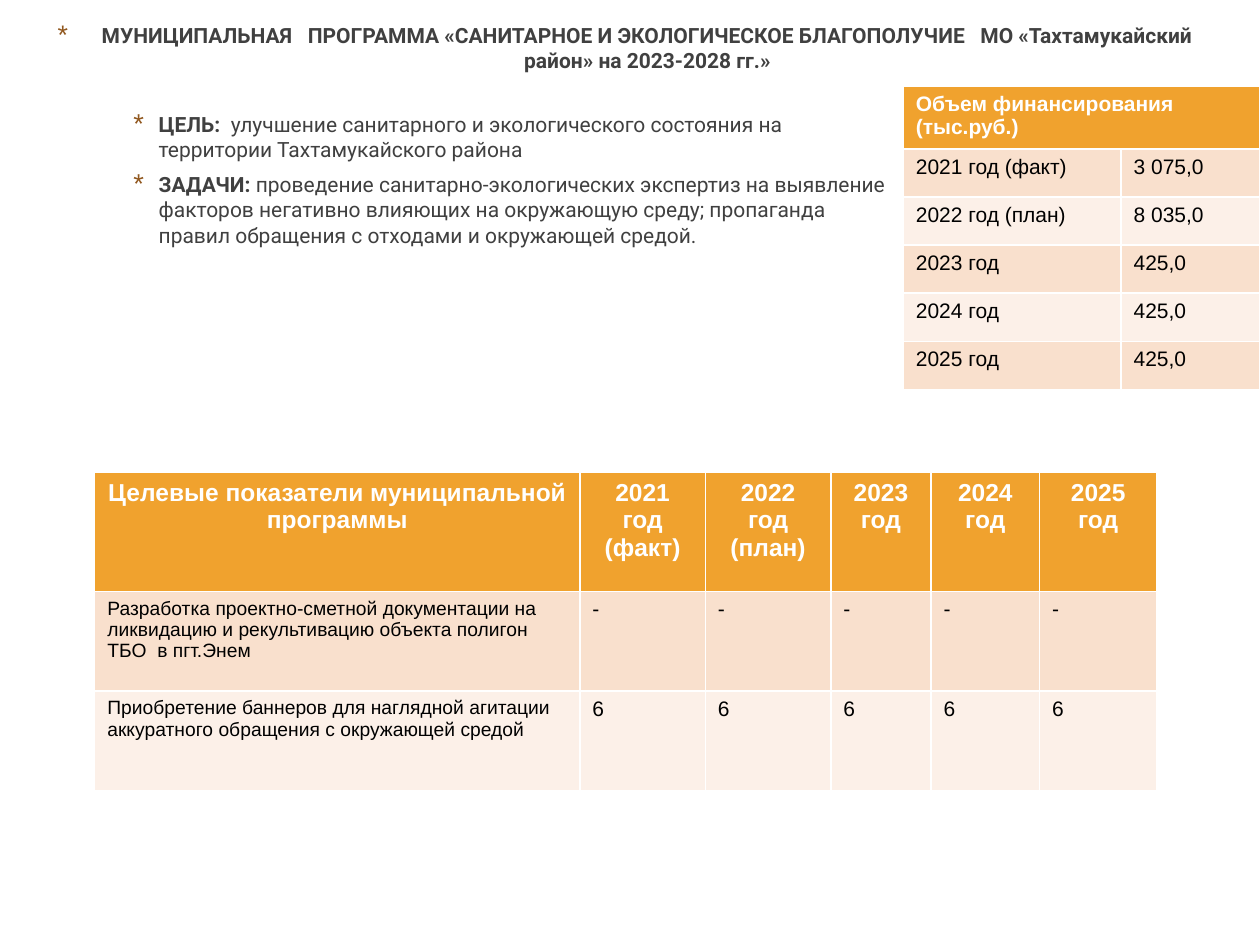
import pptx
import pptx.dml.color
import pptx.enum.text
import pptx.oxml
import pptx.util
from pptx.util import Cm

# Content
TITLE = [[("МУНИЦИПАЛЬНАЯ   ПРОГРАММА «САНИТАРНОЕ И ЭКОЛОГИЧЕСКОЕ БЛАГОПОЛУЧИЕ   "
           "МО «Тахтамукайский район» на 2023-2028 гг.»", True)]]
AIMS = [
    [("ЦЕЛЬ:  ", True),
     ("улучшение санитарного и экологического состояния на территории "
      "Тахтамукайского района", False)],
    [("ЗАДАЧИ: ", True),
     ("проведение санитарно-экологических экспертиз на выявление факторов негативно "
      "влияющих на окружающую среду; пропаганда правил обращения с отходами и "
      "окружающей средой.", False)],
]
FUNDING = [
    ["Объем финансирования (тыс.руб.)", ""],
    ["2021 год (факт)", "3 075,0"],
    ["2022 год (план)", "8 035,0"],
    ["2023 год", "425,0"],
    ["2024 год", "425,0"],
    ["2025 год", "425,0"],
]
INDICATORS = [
    ["Целевые показатели муниципальной программы", "2021 год (факт)", "2022 год (план)",
     "2023 год", "2024 год", "2025 год"],
    ["Разработка проектно-сметной документации на ликвидацию и рекультивацию объекта "
     "полигон ТБО  в пгт.Энем"] + ["-"] * 5,
    ["Приобретение баннеров для наглядной агитации аккуратного обращения с окружающей "
     "средой"] + ["6"] * 5,
]

# Formats
HEADER_FILL, BAND_FILLS = "F0A22E", ("F9E0CD", "FCF0E8")
LEFT, CENTER = pptx.enum.text.PP_ALIGN.LEFT, pptx.enum.text.PP_ALIGN.CENTER
PROSE = {"name": "Roboto", "size": 12, "color": "404040"}
HEADER = {"name": "Arial", "size": 12, "color": "FFFFFF", "bold": True}
BODY = {"name": "Arial", "size": 12, "color": "000000", "bold": False}


def rgb(value):
    return pptx.dml.color.RGBColor.from_string(value)


def add_run(paragraph, text, style):
    run = paragraph.add_run()
    run.text = text
    for key, value in style.items():
        if key == "color":
            run.font.color.rgb = rgb(value)
        else:
            setattr(run.font, key, pptx.util.Pt(value) if key == "size" else value)


def add_bullet(paragraph, indent, hanging, percent, spaced):
    """Hanging asterisk bullet, with optional spacing around the paragraph."""
    props = paragraph._p.get_or_add_pPr()
    props.set("marL", str(Cm(indent)))
    props.set("indent", str(-Cm(hanging)))
    spacing = ('<a:spcBef><a:spcPct val="20000"/></a:spcBef>',
               '<a:spcAft><a:spcPts val="300"/></a:spcAft>') if spaced else ()
    for part in (*spacing,
                 '<a:buClr><a:srgbClr val="91581F"/></a:buClr>',
                 f'<a:buSzPct val="{percent * 1000}"/>',
                 '<a:buFont typeface="Arial"/>',
                 '<a:buChar char="*"/>'):
        tag, rest = part[:part.index(">")], part[part.index(">"):]
        namespace = 'xmlns:a="http://schemas.openxmlformats.org/drawingml/2006/main"'
        if tag.endswith("/"):
            tag, rest = tag[:-1], "/" + rest
        props.append(pptx.oxml.parse_xml(f"{tag} {namespace}{rest}"))


def add_bulleted_text(slide, box, paragraphs, align, **bullet):
    frame = slide.shapes.add_textbox(*map(Cm, box)).text_frame
    frame.word_wrap = True
    for number, runs in enumerate(paragraphs):
        paragraph = frame.add_paragraph() if number else frame.paragraphs[0]
        paragraph.alignment = align
        add_bullet(paragraph, **bullet)
        for text, bold in runs:
            add_run(paragraph, text, PROSE | {"bold": bold})


def add_banded_table(slide, left, top, widths, heights, rows, header, label, align):
    """The default table style supplies the white rules between cells."""
    table = slide.shapes.add_table(len(rows), len(widths), Cm(left), Cm(top),
                                   Cm(sum(widths)), Cm(sum(heights))).table
    for column, width in zip(table.columns, widths):
        column.width = Cm(width)
    for r, (row, height) in enumerate(zip(rows, heights)):
        table.rows[r].height = Cm(height)
        for c, text in enumerate(row):
            cell = table.cell(r, c)
            cell.fill.solid()
            cell.fill.fore_color.rgb = rgb(BAND_FILLS[(r - 1) % 2] if r else HEADER_FILL)
            paragraph = cell.text_frame.paragraphs[0]
            paragraph.alignment = LEFT if r else align
            if text:
                add_run(paragraph, text, header if r == 0 else BODY if c else label)
    return table


def main():
    deck = pptx.Presentation()
    deck.slide_width, deck.slide_height = Cm(25.4), Cm(19.05)
    slide = deck.slides.add_slide(deck.slide_layouts[6])

    # Programme title
    add_bulleted_text(slide, (0.71, 0.33, 23.8, 2.39), TITLE, CENTER,
                      indent=0.89, hanging=0.89, percent=128, spaced=False)

    # Funding by year
    funding = add_banded_table(slide, 18.21, 1.73, [4.39, 2.79], [0.61] + [0.97] * 5,
                               FUNDING, HEADER, BODY, LEFT)
    funding.cell(0, 0).merge(funding.cell(0, 1))

    # Goal and tasks
    add_bulleted_text(slide, (2.31, 2.13, 15.8, 8.79), AIMS, LEFT,
                      indent=0.64, hanging=0.51, percent=130, spaced=True)

    # Target indicators
    add_banded_table(slide, 1.91, 9.53, [9.78, 2.53, 2.53, 2.02, 2.19, 2.36],
                     [2.39, 2.01, 2.01], INDICATORS, HEADER | {"size": 14},
                     BODY | {"size": 11}, CENTER)

    deck.save("out.pptx")


if __name__ == "__main__":
    main()
